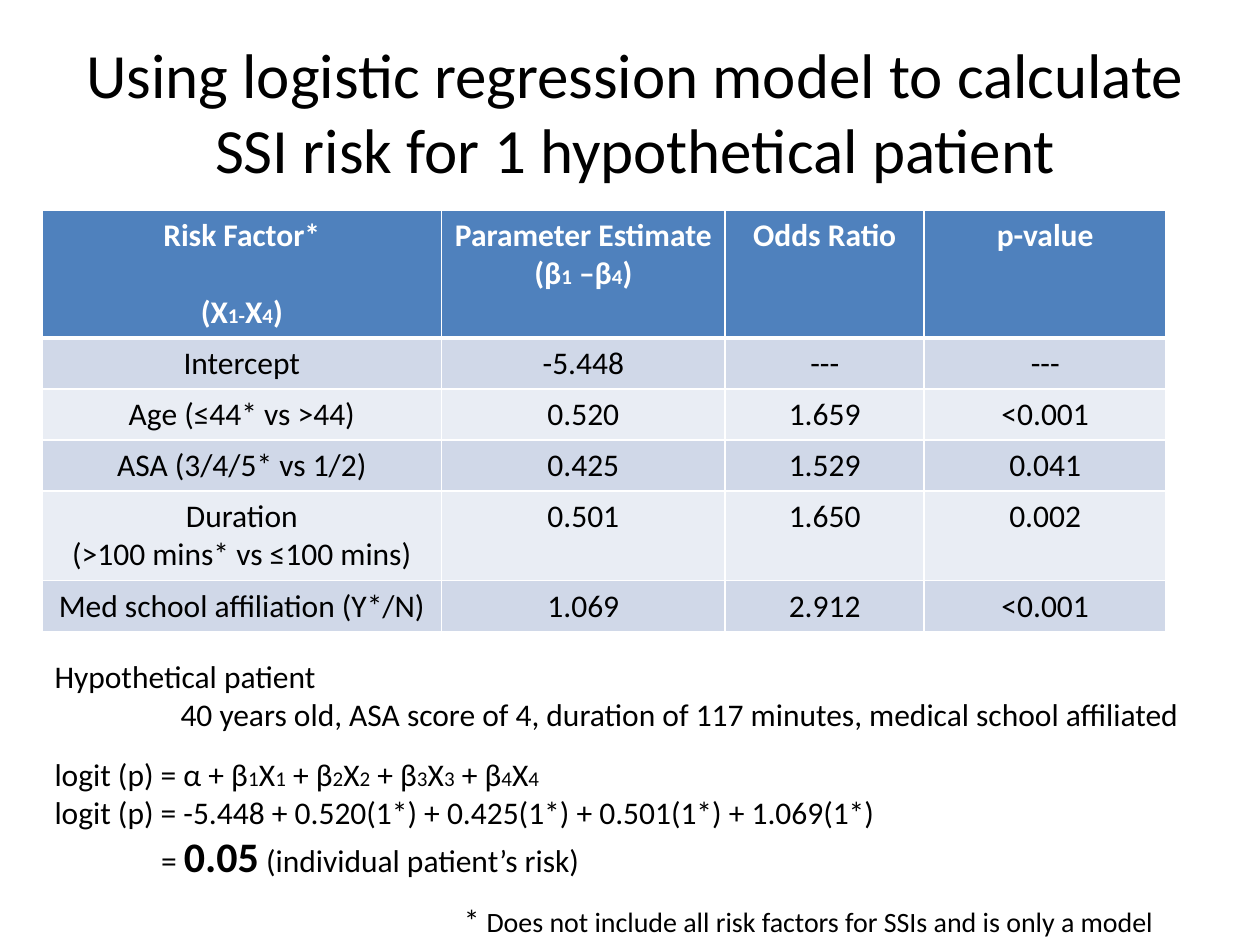
from lxml import etree
from pptx import Presentation, util as u
from pptx.dml.color import RGBColor
from pptx.enum import text as t
from pptx.oxml.ns import qn

HUES = {"ink": "000000", "paper": "FFFFFF", "head": "4F81BD", "dark": "D0D8E8", "light": "E9EDF4"}
ROWS = [
    ["Risk Factor*\n(X|1-|X|4|)", "Parameter Estimate\n(β|1| –β|4|)", "Odds Ratio", "p-value"],
    ["Intercept", "-5.448", "---", "---"],
    ["Age (≤44* vs >44)", "0.520", "1.659", "<0.001"],
    ["ASA (3/4/5* vs 1/2)", "0.425", "1.529", "0.041"],
    ["Duration\n(>100 mins* vs ≤100 mins)", "0.501", "1.650", "0.002"],
    ["Med school affiliation (Y*/N)", "1.069", "2.912", "<0.001"],
]
WIDTHS = [8.05, 5.72, 4.01, 4.88]
HEIGHTS = [2.54, 1.03, 1.03, 1.03, 1.8, 1.03]


class Deck:
    """Holds the style and the current slide, and adds elements to it."""

    def __init__(self):
        self.prs = Presentation()
        self.prs.slide_width, self.prs.slide_height = u.Cm(25.4), u.Cm(19.05)
        self.slide = self.prs.slides.add_slide(self.prs.slide_layouts[5])
        self.font = "Calibri"

    def style(self, run, size, hue="ink", bold=False):
        run.font.name, run.font.size, run.font.bold = self.font, u.Pt(size), bold
        run.font.color.rgb = RGBColor.from_string(HUES[hue])

    def fill_para(self, para, words, size=18, alt=12, hue="ink", bold=False, strong=False):
        for i, part in enumerate(words.split("|")):
            if part:
                run = para.add_run()
                run.text = part
                self.style(run, alt if i % 2 else size, hue, bold or (strong and i % 2 == 1))

    def title(self, words):
        shape = self.slide.shapes.title
        shape.left, shape.top, shape.width, shape.height = map(u.Cm, (0.64, 0.64, 24.33, 3.18))
        frame = shape.text_frame
        frame.text = words
        frame.word_wrap, frame.vertical_anchor = True, t.MSO_ANCHOR.MIDDLE
        frame.paragraphs[0].alignment = t.PP_ALIGN.CENTER
        self.style(frame.paragraphs[0].runs[0], 36)

    def edge(self, side, width):
        line = etree.Element(qn("a:ln" + side), w=str(u.Pt(width)))
        fill = etree.SubElement(line, qn("a:solidFill"))
        etree.SubElement(fill, qn("a:srgbClr"), val=HUES["paper"])
        return line

    def cell(self, cell, words, fill, hue, bold, base):
        cell.fill.solid()
        cell.fill.fore_color.rgb = RGBColor.from_string(HUES[fill])
        for i, (side, width) in enumerate(zip("LRTB", (1, 1, 1, base))):
            cell._tc.get_or_add_tcPr().insert(i, self.edge(side, width))
        frame = cell.text_frame
        for i, line in enumerate(words.split("\n")):
            para = frame.add_paragraph() if i else frame.paragraphs[0]
            para.alignment = t.PP_ALIGN.CENTER
            self.fill_para(para, line, hue=hue, bold=bold)

    def table(self, rows, widths, heights, left, top):
        size = map(u.Cm, (left, top, sum(widths), sum(heights)))
        grid = self.slide.shapes.add_table(len(rows), len(widths), *size).table
        for col, width in zip(grid.columns, widths):
            col.width = u.Cm(width)
        for r, (row, height) in enumerate(zip(rows, heights)):
            grid.rows[r].height = u.Cm(height)
            fill = "head" if r == 0 else "dark" if r % 2 else "light"
            for c, words in enumerate(row):
                self.cell(grid.cell(r, c), words, fill, "ink" if r else "paper", r == 0, 1 if r else 3)
        return grid

    def box(self, lines, left, top, width, height):
        frame = self.slide.shapes.add_textbox(*map(u.Cm, (left, top, width, height))).text_frame
        frame.word_wrap = True
        for i, (words, indent, gap, look) in enumerate(lines):
            para = frame.add_paragraph() if i else frame.paragraphs[0]
            para.space_before = u.Pt(gap)
            para._p.get_or_add_pPr().set("marL", str(u.Cm(indent)))
            self.fill_para(para, words, **look)


def main():
    deck = Deck()
    deck.title("Using logistic regression model to calculate SSI risk for 1 hypothetical patient")
    grid = deck.table(ROWS, WIDTHS, HEIGHTS, 0.85, 4.23)
    grid.cell(0, 0).text_frame.paragraphs[1].space_before = u.Pt(22)
    deck.box([
        ("Hypothetical patient", 0, 0, {}),
        ("40 years old, ASA score of 4, duration of 117 minutes, medical school affiliated", 2.54, 0, {}),
        ("logit (p) = α" + "".join(f" + β|{n}|X|{n}|" for n in range(1, 5)), 0, 12.8, {}),
        ("logit (p) = -5.448 + 0.520(1*) + 0.425(1*) + 0.501(1*) + 1.069(1*)", 0, 0, {}),
        ("= |0.05| (individual patient’s risk)", 2.15, 0, {"alt": 24, "strong": True}),
    ], 0.85, 13.12, 25.83, 4.87)
    deck.box([("* |Does not include all risk factors for SSIs and is only a model", 0, 0, {"alt": 16})],
             9.1, 18.03, 23.28, 1.02)
    deck.prs.save("out.pptx")


if __name__ == "__main__":
    main()
